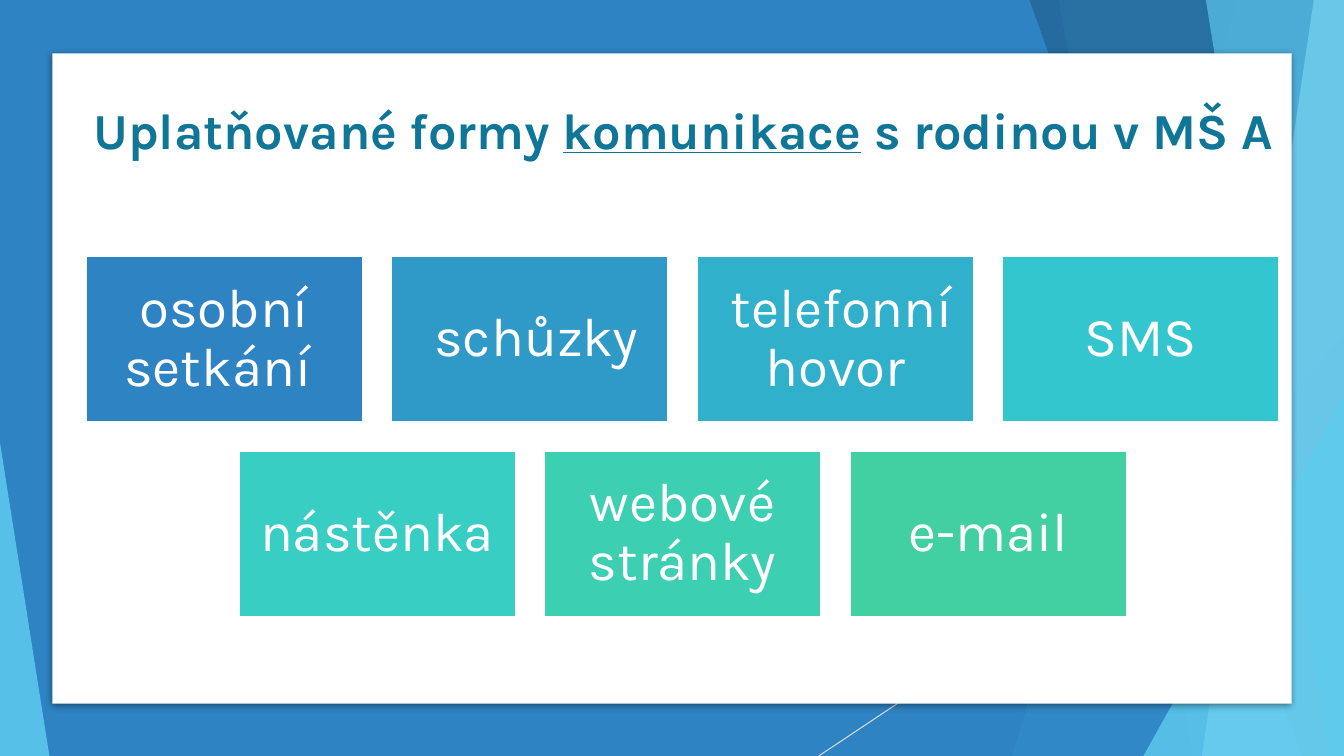
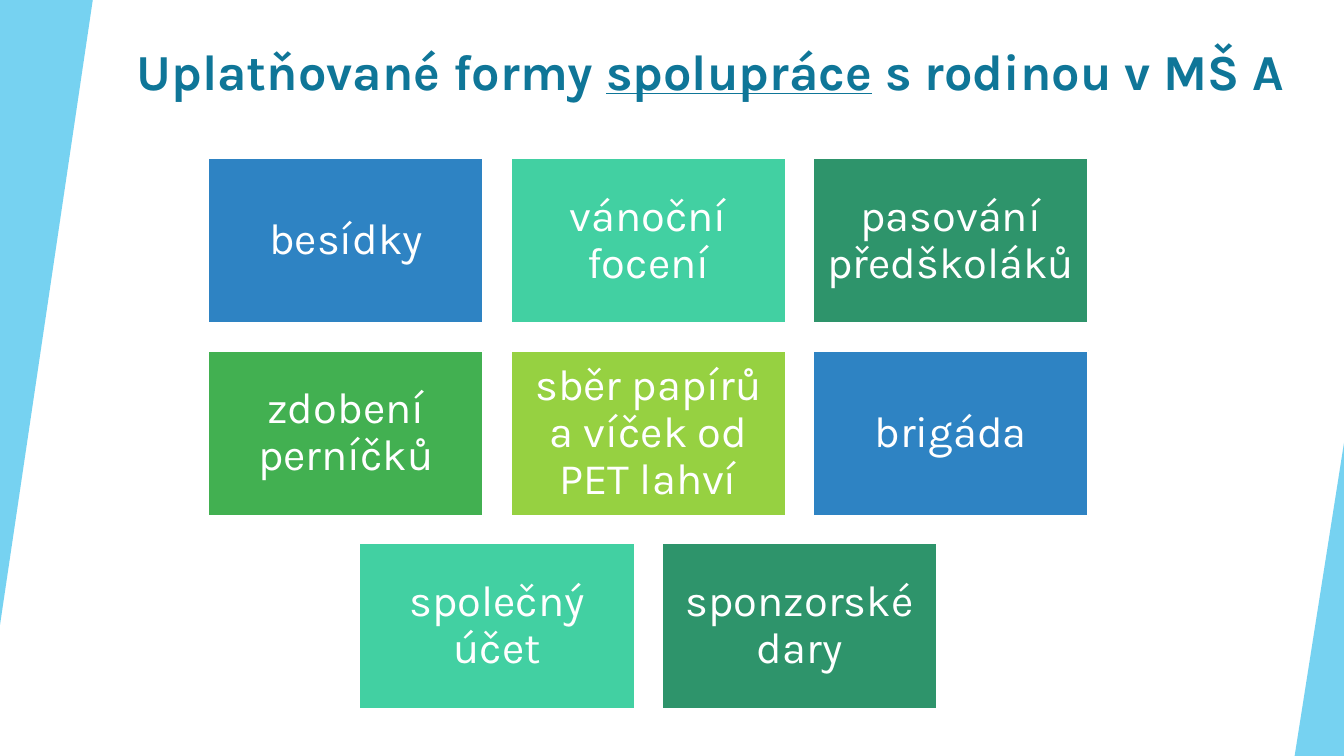
"""Build two slides on how a nursery school communicates and cooperates with families."""
from lxml import etree
from pptx import Presentation
from pptx.dml.color import RGBColor
from pptx.enum.shapes import MSO_CONNECTOR, MSO_SHAPE
from pptx.enum.text import MSO_ANCHOR, PP_ALIGN
from pptx.oxml.ns import qn
from pptx.util import Inches, Pt

STRAIGHT = MSO_CONNECTOR.STRAIGHT
RECTANGLE = MSO_SHAPE.RECTANGLE
TRIANGLE = MSO_SHAPE.ISOSCELES_TRIANGLE
CENTER = PP_ALIGN.CENTER
MIDDLE = MSO_ANCHOR.MIDDLE
TOP = MSO_ANCHOR.TOP

WHITE = RGBColor(0xFF, 0xFF, 0xFF)
BLACK = RGBColor(0x00, 0x00, 0x00)
GREY = RGBColor(0xD9, 0xD9, 0xD9)
TITLE_BLUE = RGBColor(0x0F, 0x76, 0x98)
BLUE = RGBColor(0x2E, 0x83, 0xC3)
DARK_BLUE = RGBColor(0x22, 0x62, 0x92)
SKY = RGBColor(0x5F, 0xCB, 0xEF)
PALE_SKY = RGBColor(0x9F, 0xE0, 0xF5)
STEEL = RGBColor(0x2F, 0x99, 0xC7)
CYAN = RGBColor(0x31, 0xB0, 0xCB)
AQUA = RGBColor(0x34, 0xC6, 0xCE)
TURQUOISE = RGBColor(0x39, 0xCE, 0xC4)
TEAL = RGBColor(0x3D, 0xCF, 0xB2)
MINT = RGBColor(0x42, 0xD0, 0xA2)
FOREST = RGBColor(0x2E, 0x94, 0x6B)
GREEN = RGBColor(0x42, 0xB0, 0x51)
LIME = RGBColor(0x96, 0xD1, 0x41)

FONT = "Karla"
WIDTH, HEIGHT = 13.33, 7.5

COMMUNICATION = [
    [("osobní setkání ", BLUE), (" schůzky", STEEL), (" telefonní hovor", CYAN), ("SMS", AQUA)],
    [("nástěnka", TURQUOISE), ("webové stránky", TEAL), ("e-mail", MINT)],
]
COOPERATION = [
    [("besídky", BLUE), ("vánoční focení", MINT), ("pasování předškoláků", FOREST)],
    [("zdobení perníčků", GREEN), ("sběr papírů a víček od PET lahví", LIME), ("brigáda", BLUE)],
    [("společný účet", MINT), ("sponzorské dary", FOREST)],
]


def paint(shape, color, opacity=100):
    """Give a shape a flat, borderless fill of the given opacity in percent."""
    shape.shadow.inherit = False
    shape.line.fill.background()
    shape.fill.solid()
    shape.fill.fore_color.rgb = color
    if opacity < 100:
        tint = shape.fill._xPr.find(qn("a:solidFill"))[0]
        etree.SubElement(tint, qn("a:alpha"), val=str(opacity * 1000))


def add_box(page, kind, left, top, width, height, color, opacity=100):
    """Add a painted preset shape."""
    box = page.shapes.add_shape(kind, Inches(left), Inches(top), Inches(width), Inches(height))
    paint(box, color, opacity)
    return box


def add_triangle(page, left, top, width, height, apex, color, opacity):
    """Add a triangle whose apex lies at the given share of its width."""
    triangle = add_box(page, TRIANGLE, left, top, width, height, color, opacity)
    triangle.adjustments[0] = apex
    return triangle


def add_facet(page, top_left, bottom_left, bottom_right, color, opacity):
    """Add a full-height facet that reaches the top right corner of the page."""
    builder = page.shapes.build_freeform(Inches(top_left), 0)
    builder.add_line_segments([
        (Inches(WIDTH), 0),
        (Inches(bottom_right), Inches(HEIGHT)),
        (Inches(bottom_left), Inches(HEIGHT)),
    ])
    paint(builder.convert_to_shape(), color, opacity)


def add_line(page, start, end, color):
    """Add a thin straight line without a shadow."""
    line = page.shapes.add_connector(STRAIGHT, *(Inches(value) for value in start + end))
    line.line.color.rgb = color
    line.line.width = Pt(0.75)
    etree.SubElement(line._element.spPr, qn("a:effectLst"))


def add_card(page, left, top, width, height):
    """Add the white card with its soft drop shadow."""
    card = add_box(page, RECTANGLE, left, top, width, height, WHITE)
    effects = card._element.spPr.find(qn("a:effectLst"))
    shadow = etree.SubElement(
        effects, qn("a:outerShdw"), blurRad=str(Pt(5)), dist=str(Pt(1.4)), dir="5400000")
    color = etree.SubElement(shadow, qn("a:srgbClr"), val=str(BLACK))
    etree.SubElement(color, qn("a:alpha"), val="43000")


def format_span(span, size, color):
    """Set the typeface, size and colour of a run."""
    span.font.name = FONT
    span.font.size = Pt(size)
    span.font.color.rgb = color


def set_frame(frame, anchor, inset):
    """Set wrapping, anchor and equal insets of a text frame."""
    frame.word_wrap = True
    frame.vertical_anchor = anchor
    frame.margin_left = frame.margin_right = Inches(inset)
    frame.margin_top = frame.margin_bottom = Inches(inset)


def add_title(page, left, top, width, height, keyword):
    """Add the bold title with its underlined keyword."""
    box = page.shapes.add_textbox(Inches(left), Inches(top), Inches(width), Inches(height))
    set_frame(box.text_frame, TOP, 0.05)
    para = box.text_frame.paragraphs[0]
    para.alignment = CENTER
    for text in ("Uplatňované formy ", keyword, " s rodinou v MŠ A"):
        span = para.add_run()
        span.text = text
        format_span(span, 36, TITLE_BLUE)
        span.font.bold = True
        span.font.underline = text == keyword


def add_tile(page, left, top, width, height, text, color, size, inset):
    """Add one coloured tile with centred white text."""
    tile = add_box(page, RECTANGLE, left, top, width, height, color)
    tile.line.color.rgb = WHITE
    tile.line.width = Pt(1.5)
    set_frame(tile.text_frame, MIDDLE, inset)
    tile.text_frame.text = text
    para = tile.text_frame.paragraphs[0]
    para.alignment = CENTER
    para.line_spacing = 0.9
    format_span(para.runs[0], size, WHITE)


def add_tiles(page, rows, center, top, width, height, gap, size, inset):
    """Lay out rows of tiles, each row centred on the same axis."""
    for row_number, row in enumerate(rows):
        row_width = len(row) * (width + gap) - gap
        row_top = top + row_number * (height + gap)
        for column, (text, color) in enumerate(row):
            left = center - row_width / 2 + column * (width + gap)
            add_tile(page, left, row_top, width, height, text, color, size, inset)


def add_backdrop(page):
    """Add the blue background with its translucent facets."""
    page.background.fill.solid()
    page.background.fill.fore_color.rgb = BLUE
    add_line(page, (WIDTH, 4.03), (8.12, HEIGHT), GREY)
    add_facet(page, 12.28, 10.04, WIDTH, SKY, 30)
    add_facet(page, 10.5, 11.83, WIDTH, SKY, 20)
    add_triangle(page, 9.77, 3.33, 3.56, 4.17, 1, BLUE, 72)
    add_facet(page, 10.21, 12.91, WIDTH, DARK_BLUE, 70)
    add_facet(page, 13.03, 11.92, WIDTH, PALE_SKY, 70)
    add_facet(page, 11.96, 13.18, WIDTH, SKY, 65)
    add_triangle(page, 11.34, 3.93, 1.99, 3.57, 1, SKY, 80)
    add_triangle(page, 0, 4.39, 0.49, 3.11, 0, SKY, 85)


def add_communication(page):
    """Build the slide on forms of communication."""
    add_backdrop(page)
    add_card(page, 0.52, 0.53, 12.29, 6.45)
    add_title(page, 0.74, 0.93, 12.07, 1.05, "komunikace")
    add_tiles(page, COMMUNICATION, 6.77, 2.54, 2.75, 1.65, 0.28, 39, 0.16)


def add_cooperation(page):
    """Build the slide on forms of cooperation."""
    add_title(page, 1.25, 0.35, 11.59, 1.2, "spolupráce")
    add_triangle(page, 0, 0, 0.92, 6.2, 1, SKY, 85).rotation = 180
    add_triangle(page, 12.84, 4.39, 0.49, 3.11, 1, SKY, 85)
    add_tiles(page, COOPERATION, 6.43, 1.57, 2.73, 1.64, 0.27, 31, 0.13)


def main():
    """Build and save the deck."""
    deck = Presentation()
    deck.slide_width = Inches(WIDTH)
    deck.slide_height = Inches(HEIGHT)
    blank = deck.slide_layouts[6]
    for build in (add_communication, add_cooperation):
        build(deck.slides.add_slide(blank))
    deck.save("out.pptx")


if __name__ == "__main__":
    main()
